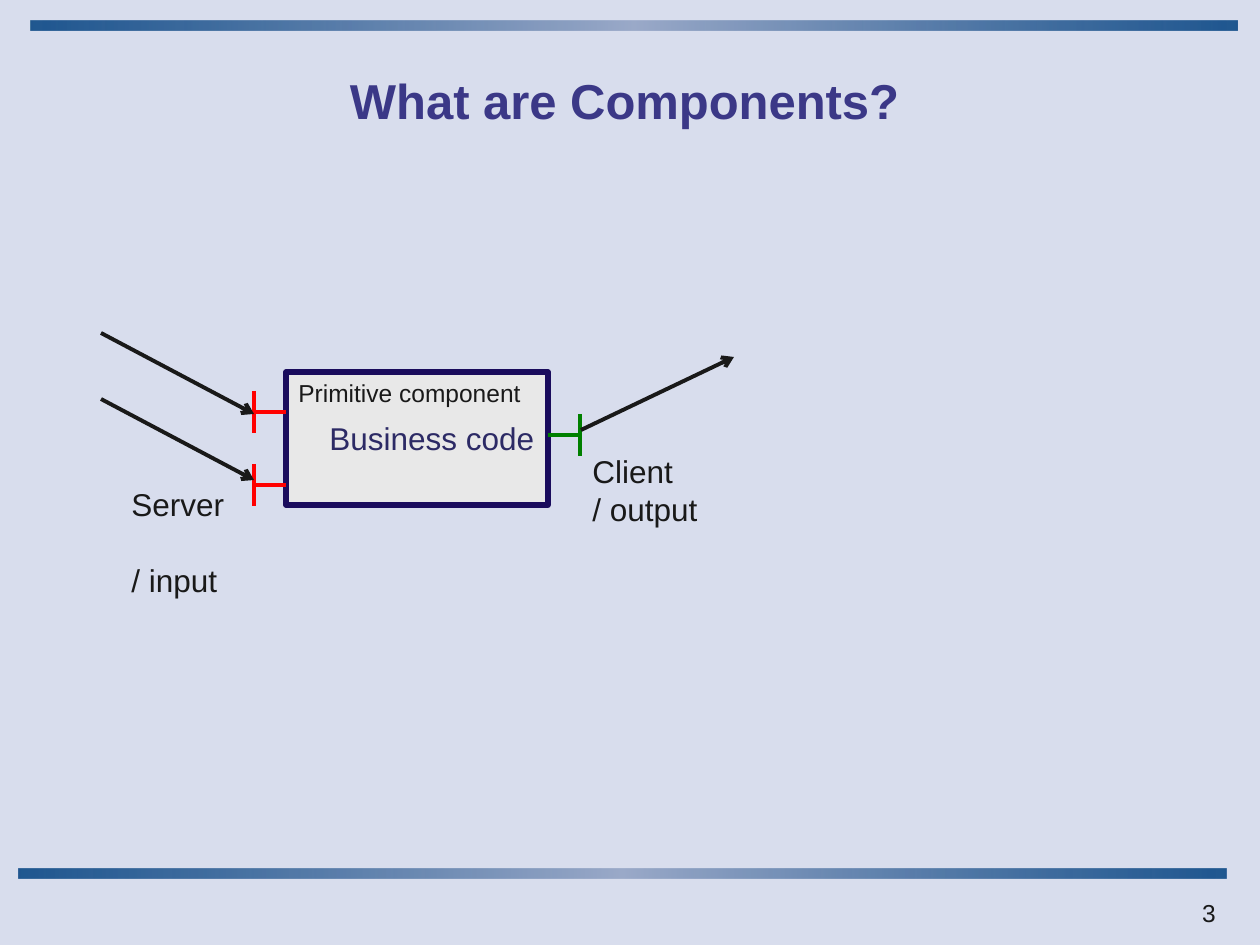
import pptx
import pptx.dml.color
import pptx.enum.shapes
import pptx.enum.text
import pptx.oxml
import pptx.oxml.ns
import pptx.util
from lxml import etree

PX = 914400 / 126
INK, RED, GREEN = "191919", "FF0000", "008000"
NSDECL = pptx.oxml.ns.nsdecls("a")
ALIGN = pptx.enum.text.PP_ALIGN
ANCHOR = pptx.enum.text.MSO_ANCHOR


def px(value):
    return pptx.util.Emu(round(value * PX))


def color(hex_string):
    return pptx.dml.color.RGBColor.from_string(hex_string)


def add_rect(shapes, left, top, width, height):
    rect = shapes.add_shape(pptx.enum.shapes.MSO_SHAPE.RECTANGLE,
                            px(left), px(top), px(width), px(height))
    rect.shadow.inherit = False
    return rect


def add_bar(shapes, left, top):
    """Thin rule, dark at both ends and pale in the middle."""
    bar = add_rect(shapes, left, top, 1207, 10)
    bar.line.fill.background()
    dark = '<a:srgbClr val="004080"><a:alpha val="85000"/></a:srgbClr>'
    pale = '<a:srgbClr val="9BAAC9"><a:alpha val="100000"/></a:srgbClr>'
    stops = "".join(f'<a:gs pos="{pos}">{stop}</a:gs>'
                    for pos, stop in ((0, dark), (50000, pale), (100000, dark)))
    gradient = pptx.oxml.parse_xml(
        f'<a:gradFill {NSDECL} rotWithShape="1"><a:gsLst>{stops}</a:gsLst>'
        '<a:lin ang="0" scaled="1"/></a:gradFill>')
    bar._element.spPr.find(pptx.oxml.ns.qn("a:prstGeom")).addnext(gradient)


def add_text(shapes, text, left, top, width, height, size=18, ink=INK, bold=False,
             align=ALIGN.LEFT, anchor=ANCHOR.TOP, wrap=False, gap=0):
    """Text box with one paragraph per line; gap is the space between them in points."""
    box = shapes.add_textbox(px(left), px(top), px(width), px(height))
    frame = box.text_frame
    frame.word_wrap = wrap
    frame.vertical_anchor = anchor
    frame.text = text
    for index, paragraph in enumerate(frame.paragraphs):
        paragraph.alignment = align
        paragraph.space_before = pptx.util.Pt(gap if index else 0)
        font = paragraph.runs[0].font
        font.name, font.size, font.bold = "Arial", pptx.util.Pt(size), bold
        font.color.rgb = color(ink)


def add_line(shapes, x1, y1, x2, y2, ink=INK, arrow=False):
    line = shapes.add_connector(pptx.enum.shapes.MSO_CONNECTOR.STRAIGHT,
                                px(x1), px(y1), px(x2), px(y2))
    line.line.color.rgb = color(ink)
    line.line.width = pptx.util.Pt(2.25)
    if arrow:
        etree.SubElement(line.line._get_or_add_ln(),
                         pptx.oxml.ns.qn("a:tailEnd"), type="arrow")
    etree.SubElement(line._element.spPr, pptx.oxml.ns.qn("a:effectLst"))


def add_port(shapes, edge_x, bar_x, y, ink):
    """T-shaped interface: a stem from the component's edge and a crossbar."""
    port = shapes.add_group_shape().shapes
    add_line(port, edge_x, y, bar_x, y, ink)
    add_line(port, bar_x, y - 21, bar_x, y + 21, ink)


def main():
    prs = pptx.Presentation()
    prs.slide_width, prs.slide_height = px(1260), px(945)
    slide = prs.slides.add_slide(prs.slide_layouts[6])
    slide.background.fill.solid()
    slide.background.fill.fore_color.rgb = color("D8DDED")
    shapes = slide.shapes

    # Frame and title
    add_bar(shapes, 31, 21)
    add_bar(shapes, 19, 869)
    add_text(shapes, "What are Components?", 55, 42, 1139, 116, size=28, ink="3B3887",
             bold=True, align=ALIGN.CENTER, anchor=ANCHOR.MIDDLE, wrap=True)

    # Component
    component = add_rect(shapes, 286, 372, 262, 133)
    component.fill.solid()
    component.fill.fore_color.rgb = color("E8E8E8")
    component.line.color.rgb = color("1A0C5D")
    component.line.width = pptx.util.Pt(3)
    add_text(shapes, "Business code", 317, 413, 232, 50, ink="2C2A65")
    add_text(shapes, "Primitive component", 286, 372, 249, 43, size=14)

    # Client interface
    add_port(shapes, 548, 580, 435, GREEN)
    add_line(shapes, 581, 430, 734, 357, arrow=True)
    add_text(shapes, "Client\n/ output", 580, 446, 131, 89)

    # Server interfaces
    for port_y, call_y in ((412, 333), (485, 399)):
        add_port(shapes, 286, 254, port_y, RED)
        add_line(shapes, 101, call_y, 254, call_y + 81, arrow=True)
    add_text(shapes, "Server\n/ input", 119, 479, 118, 89, gap=22)

    # Slide number
    add_text(shapes, "3", 998, 892, 230, 32, size=14, align=ALIGN.RIGHT, wrap=True)

    prs.save("out.pptx")


if __name__ == "__main__":
    main()
